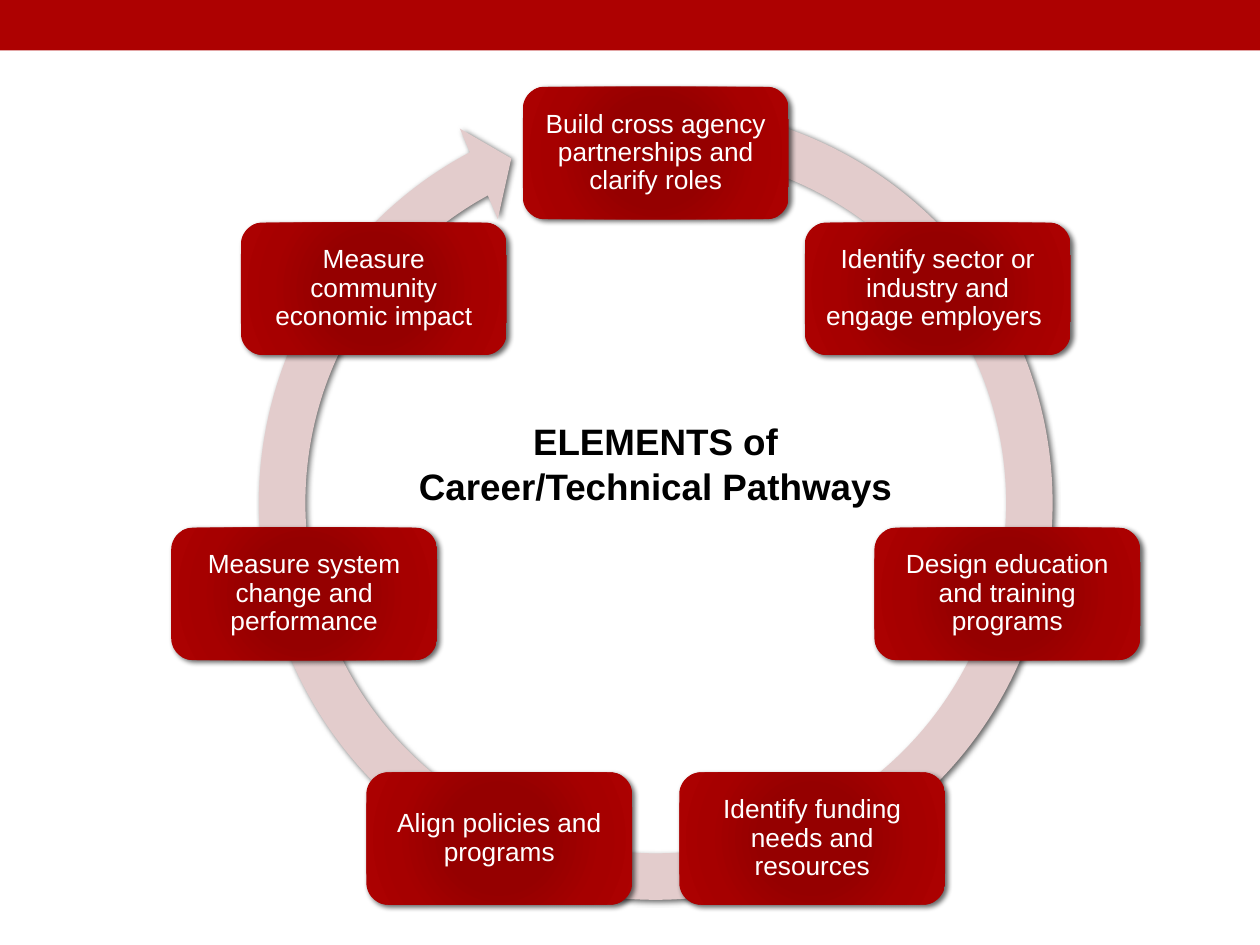
import math

import pptx
import pptx.dml.color
import pptx.enum.shapes
import pptx.enum.text
import pptx.oxml
import pptx.oxml.ns
import pptx.util

Cm, Pt = pptx.util.Cm, pptx.util.Pt
RGB = pptx.dml.color.RGBColor.from_string
SHAPE = pptx.enum.shapes.MSO_SHAPE
CENTER = pptx.enum.text.PP_ALIGN.CENTER
MIDDLE = pptx.enum.text.MSO_ANCHOR.MIDDLE

COLORS = {"red": "AD0101", "mid": "A60000", "dark": "950000", "ring": "E3CCCC",
          "white": "FFFFFF", "black": "000000"}
STEPS = ["Build cross agency partnerships and clarify roles",
         "Identify sector or industry and engage employers ",
         "Design education and training programs",
         "Identify funding needs and resources",
         "Align policies and programs",
         "Measure system change and performance",
         "Measure community economic impact"]
STOPS = [(0, "dark"), (34, "dark"), (70, "mid"), (100, "red")]
NODE_FORMAT = {"size": Pt(15), "name": "Arial", "bold": False}
TITLE_FORMAT = {"size": Pt(21), "name": "Arial", "bold": True}


def set_attrs(obj, values):
    """Set every attribute named in a dict."""
    for name, value in values.items():
        setattr(obj, name, value)


def set_text(tf, lines, font, color, spacing, inset):
    """Write centred lines with one font into a text frame."""
    set_attrs(tf, {"word_wrap": True, "vertical_anchor": MIDDLE,
                   "margin_left": inset, "margin_right": inset,
                   "margin_top": inset, "margin_bottom": inset})
    for i, line in enumerate(lines):
        p = tf.paragraphs[0] if i == 0 else tf.add_paragraph()
        set_attrs(p, {"alignment": CENTER, "line_spacing": spacing, "space_before": Pt(0)})
        r = p.add_run()
        r.text = line
        set_attrs(r.font, font)
        r.font.color.rgb = RGB(COLORS[color])


def add_plain(slide, kind, box, color):
    """Add a filled shape with neither outline nor shadow."""
    sp = slide.shapes.add_shape(kind, *map(Cm, box))
    sp.fill.solid()
    sp.fill.fore_color.rgb = RGB(COLORS[color])
    sp.line.fill.background()
    sp.shadow.inherit = False
    return sp


def add_shadow(sp):
    """Give a shape a soft shadow to the lower right."""
    effects = sp._element.spPr.find(pptx.oxml.ns.qn("a:effectLst"))
    effects.append(pptx.oxml.parse_xml(
        f'<a:outerShdw {pptx.oxml.ns.nsdecls("a")} blurRad="{Pt(3)}" dist="{Pt(2)}" '
        f'dir="2700000" algn="tl" rotWithShape="0"><a:srgbClr val="{COLORS["black"]}">'
        '<a:alpha val="60000"/></a:srgbClr></a:outerShdw>'))


def set_glow(sp):
    """Fill a shape with a radial gradient."""
    sp.fill.gradient()
    spPr = sp._element.spPr
    stops = "".join(f'<a:gs pos="{pos * 1000}"><a:srgbClr val="{COLORS[c]}"/></a:gs>'
                    for pos, c in STOPS)
    grad = pptx.oxml.parse_xml(
        f'<a:gradFill {pptx.oxml.ns.nsdecls("a")} rotWithShape="1"><a:gsLst>{stops}</a:gsLst>'
        '<a:path path="circle"><a:fillToRect l="100000" t="100000" r="100000" b="100000"/>'
        '</a:path></a:gradFill>')
    spPr.replace(spPr.find(pptx.oxml.ns.qn("a:gradFill")), grad)


def add_node(slide, box, text):
    """Add one step of the cycle."""
    sp = add_plain(slide, SHAPE.ROUNDED_RECTANGLE, box, "red")
    set_glow(sp)
    add_shadow(sp)
    set_text(sp.text_frame, [text], NODE_FORMAT, "white", 0.9, Cm(0.27))


def add_cycle(slide, box):
    """Place the circular arrow and its evenly spaced steps in a box."""
    left, top, width, height = box
    size, node_w, node_h, radius = 17.04, 5.36, 2.67, 7.27
    cx, cy = left + width / 2, top + node_h / 2 + radius
    ring = add_plain(slide, SHAPE.CIRCULAR_ARROW,
                     (cx - size / 2, top - 0.13, size, size), "ring")
    for i, value in enumerate([0.055, 3.307, 145.046, 169.566, 0.058]):
        ring.adjustments[i] = value
    add_shadow(ring)
    for i, text in enumerate(STEPS):
        angle = 2 * math.pi * i / len(STEPS)
        x, y = cx + radius * math.sin(angle), cy - radius * math.cos(angle)
        add_node(slide, (x - node_w / 2, y - node_h / 2, node_w, node_h), text)


def add_title(slide, box):
    """Move the title placeholder into a box and fill it."""
    sp = slide.shapes.title
    set_attrs(sp, dict(zip(("left", "top", "width", "height"), map(Cm, box))))
    set_text(sp.text_frame, ["ELEMENTS of", "Career/Technical Pathways"],
             TITLE_FORMAT, "black", 1, Cm(0.13))
    sp.text_frame.auto_size = pptx.enum.text.MSO_AUTO_SIZE.NONE


def main():
    """Build and save the slide."""
    prs = pptx.Presentation()
    prs.slide_width, prs.slide_height = Cm(25.4), Cm(19.05)
    slide = prs.slides.add_slide(prs.slide_layouts[5])
    add_plain(slide, SHAPE.RECTANGLE, (0, 0, 25.4, 1.02), "red")
    add_cycle(slide, (3.45, 1.75, 19.54, 16.49))
    add_title(slide, (8.15, 8.31, 10.13, 2.06))
    prs.save("out.pptx")


if __name__ == "__main__":
    main()
